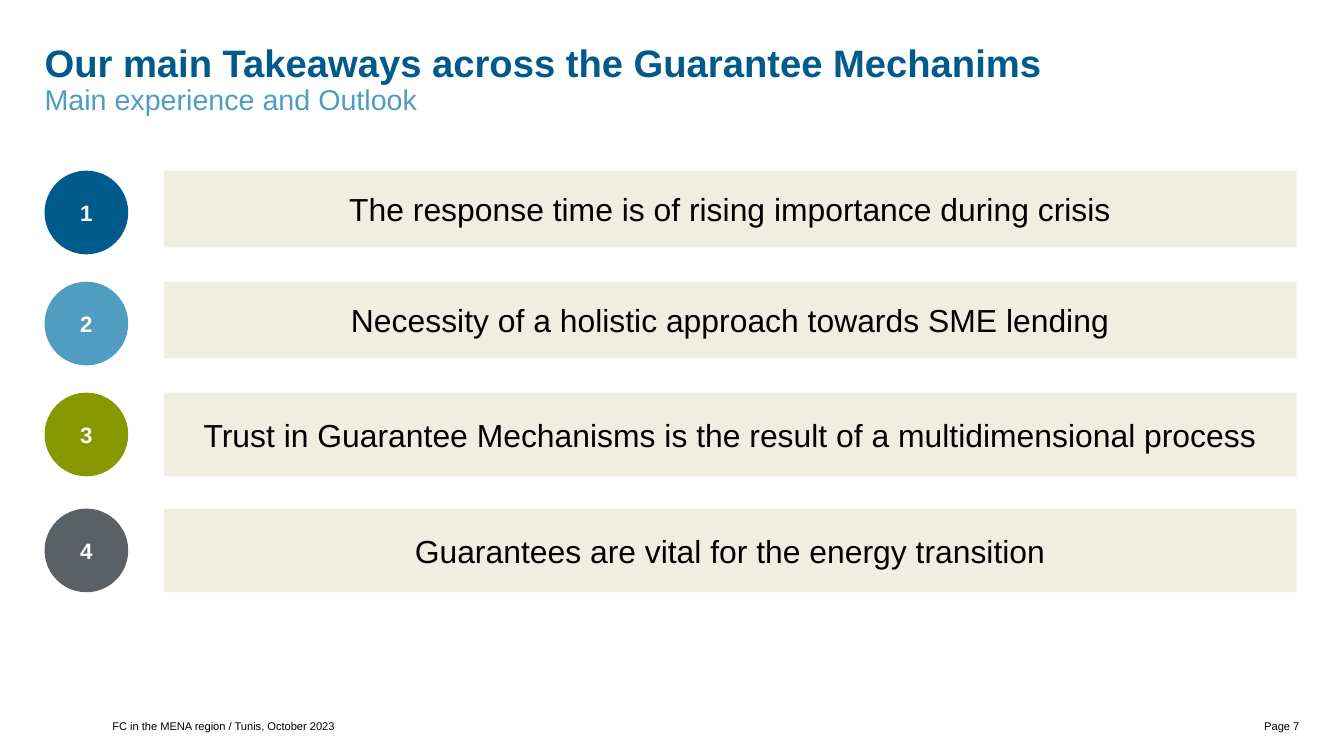
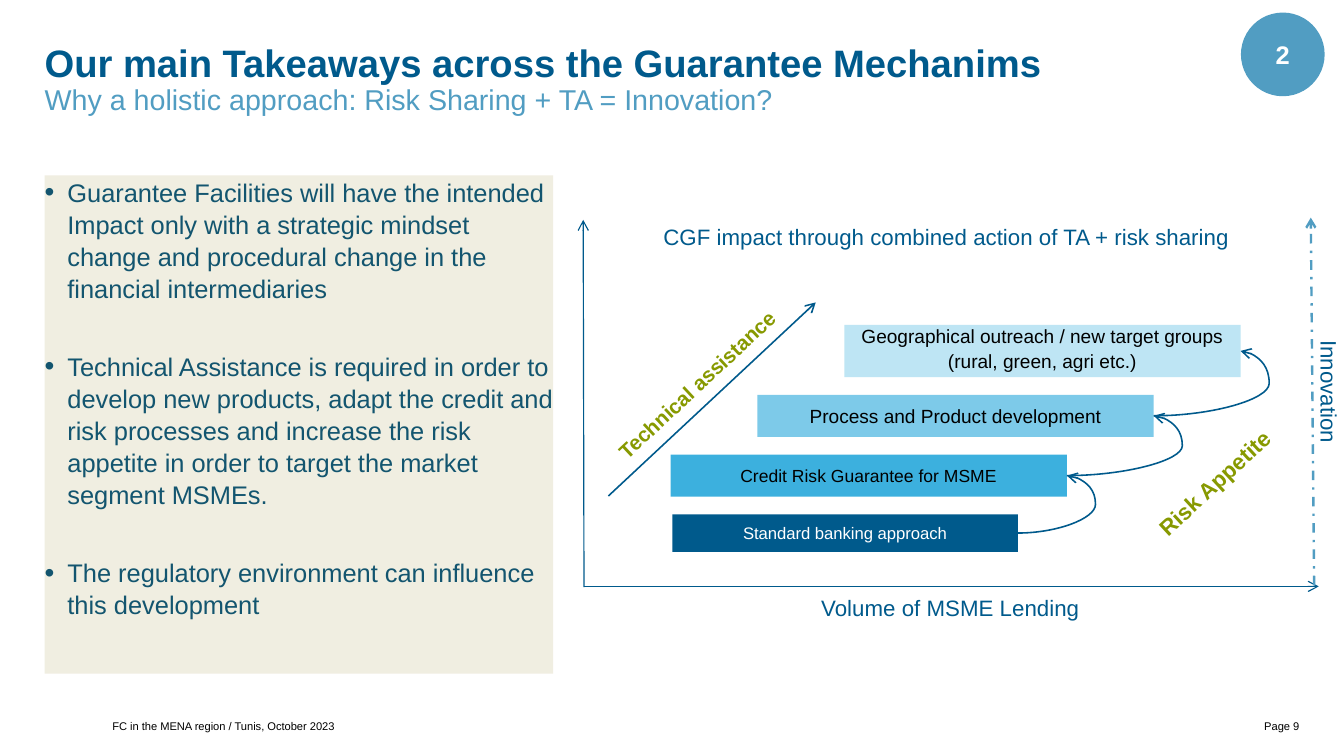
"""Builds two slides on takeaways from credit guarantee mechanisms."""
import pptx
import pptx.dml.color
import pptx.enum.dml
import pptx.enum.shapes
import pptx.enum.text
import pptx.oxml.ns
import pptx.util
from lxml import etree

Pt = pptx.util.Pt
RGB = pptx.dml.color.RGBColor.from_string
qn = pptx.oxml.ns.qn
ALIGN = pptx.enum.text.PP_ALIGN
ANCHOR = pptx.enum.text.MSO_ANCHOR
SHAPE = pptx.enum.shapes.MSO_SHAPE
CONNECTOR = pptx.enum.shapes.MSO_CONNECTOR
DASH = pptx.enum.dml.MSO_LINE.DASH_DOT

FONT = "Arial"
COLOURS = {
    "navy": "005A8C", "blue": "519DC2", "green": "879900", "grey": "5A6166",
    "sand": "F0EEE1", "teal": "13556F", "sky": "3CB0DE", "light": "7DCAE9",
    "pale": "BEE5F4", "black": "000000", "white": "FFFFFF",
}
MARGIN = 28
CIRCLE = 52.6


def add_label(page, text, area, size, colour, bold=False, align=ALIGN.LEFT,
              anchor=ANCHOR.TOP, kind=None, fill=None, inset=(0, 0)):
    """Add a text box, or a filled shape, with one paragraph per line of text."""
    place = [Pt(length) for length in area]
    if kind is None:
        box = page.shapes.add_textbox(*place)
    else:
        box = page.shapes.add_shape(kind, *place)
        box.shadow.inherit = False
        box.fill.solid()
        box.fill.fore_color.rgb = RGB(COLOURS[fill])
        box.line.fill.background()
    frame = box.text_frame
    frame.word_wrap = True
    frame.vertical_anchor = anchor
    frame.margin_left = frame.margin_right = Pt(inset[0])
    frame.margin_top = frame.margin_bottom = Pt(inset[1])
    for index, line in enumerate(text.split("\n")):
        para = frame.paragraphs[0] if index == 0 else frame.add_paragraph()
        para.alignment = align
        span = para.add_run()
        span.text = line
        span.font.name = FONT
        span.font.size = Pt(size)
        span.font.bold = bold
        span.font.color.rgb = RGB(COLOURS[colour])
    return box


def add_circle(page, number, left, top, size, fill):
    """Add a numbered circle."""
    add_label(page, number, (left, top, CIRCLE, CIRCLE), size, "white", True,
              ALIGN.CENTER, ANCHOR.MIDDLE, SHAPE.OVAL, fill)


deck = pptx.Presentation()
deck.slide_width, deck.slide_height = Pt(844.56), Pt(475.2)

pages = []
for subtitle, number in [
    ("Main experience and Outlook", "Page 7"),
    ("Why a holistic approach: Risk Sharing + TA = Innovation?", "Page 9"),
]:
    page = deck.slides.add_slide(deck.slide_layouts[6])
    title = add_label(page, "Our main Takeaways across the Guarantee Mechanims",
                      (MARGIN, 26.6, 788, 29.5), 24, "navy", True)
    subtitle_box = add_label(page, subtitle, (MARGIN, 53.3, 788, 26), 18, "blue")
    for box in (title, subtitle_box):
        box.text_frame.paragraphs[0].line_spacing = 0.95
    add_label(page, "FC in the MENA region / Tunis, October 2023",
              (70.6, 444.2, 681, 16.6), 7, "black", anchor=ANCHOR.BOTTOM)
    add_label(page, number, (756, 444.2, 60.5, 16.6), 7, "black",
              align=ALIGN.RIGHT, anchor=ANCHOR.BOTTOM)
    pages.append(page)
overview, holistic = pages

takeaways = [
    ("The response time is of rising importance during crisis", 107.3, 48.2, "navy"),
    ("Necessity of a holistic approach towards SME lending", 177.1, 48.2, "blue"),
    ("Trust in Guarantee Mechanisms is the result of a multidimensional process",
     246.8, 52.6, "green"),
    ("Guarantees are vital for the energy transition", 319.7, 52.6, "grey"),
]
for number, (text, top, height, fill) in enumerate(takeaways, 1):
    add_label(overview, text, (103.2, top, 711.4, height), 20, "black", False,
              ALIGN.CENTER, ANCHOR.MIDDLE, SHAPE.RECTANGLE, "sand")
    add_circle(overview, str(number), MARGIN, top, 14, fill)

arguments = "\n".join([
    "Guarantee Facilities will have the intended Impact only with a strategic mindset "
    "change and procedural change in the financial intermediaries",
    "Technical Assistance is required in order to develop new products, adapt the credit "
    "and risk processes and increase the risk appetite in order to target the market "
    "segment MSMEs.",
    "The regulatory environment can influence this development",
])
panel = add_label(holistic, arguments, (MARGIN, 110.2, 319.7, 313.2), 16, "teal",
                  kind=SHAPE.RECTANGLE, fill="sand")
for index, para in enumerate(panel.text_frame.paragraphs):
    properties = para._p.get_or_add_pPr()
    properties.set("marL", str(Pt(14.4)))
    properties.set("indent", str(-Pt(14.4)))
    etree.SubElement(properties, qn("a:buSzPct"), val="110000")
    etree.SubElement(properties, qn("a:buFont"), typeface=FONT)
    etree.SubElement(properties, qn("a:buChar"), char="•")
    para.line_spacing = 1.05
    if index:
        para.space_before = Pt(29)

steps = []
for text, area, size, colour, fill in [
    ("Standard banking approach", (422.6, 323.3, 217, 23.6), 10.5, "white", "navy"),
    ("Credit Risk Guarantee for MSME", (421.4, 285.8, 249, 26.4), 11, "black", "sky"),
    ("Process and Product development", (476, 248.2, 249, 26.4), 12, "black", "light"),
    ("Geographical outreach / new target groups\n(rural, green, agri etc.)",
     (530.6, 204.2, 249, 32.8), 12, "black", "pale"),
]:
    steps.append(add_label(holistic, text, area, size, colour, False, ALIGN.CENTER,
                           ANCHOR.MIDDLE, SHAPE.RECTANGLE, fill, (7.6, 4)))
outreach = steps[-1].text_frame
outreach.vertical_anchor = ANCHOR.TOP
for para in outreach.paragraphs:
    para.line_spacing = Pt(10)
outreach.paragraphs[1].space_before = Pt(6)

for text, area, size, colour, bold, rotation, align in [
    ("CGF impact through combined action of TA + risk sharing",
     (367.2, 136.1, 455, 25.9), 14, "navy", False, 0, ALIGN.CENTER),
    ("Volume of MSME Lending",
     (465.1, 369.4, 264.2, 25.2), 14, "navy", False, 0, ALIGN.CENTER),
    ("Innovation", (789.1, 240.5, 92.9, 24.5), 14, "navy", False, 90, ALIGN.LEFT),
    ("Risk Appetite", (694.8, 290.9, 136.8, 25.2), 14, "green", True, 317.3, ALIGN.CENTER),
    ("Technical assistance",
     (357.1, 229.7, 161.3, 23.8), 13, "green", True, 316.9, ALIGN.CENTER),
]:
    label = add_label(holistic, text, area, size, colour, bold, align, inset=(7.6, 4))
    label.rotation = rotation

arrows = []
for ends, colour, width, dash in [
    ((367, 369, 366.5, 138.2), "navy", 0.75, None),
    ((367, 368.6, 828.7, 368.6), "navy", 0.75, None),
    ((382.3, 311.8, 512.6, 190.1), "navy", 1, None),
    ((825.8, 367.9, 823.7, 136.8), "blue", 1.5, DASH),
]:
    arrow = holistic.shapes.add_connector(CONNECTOR.STRAIGHT, *[Pt(end) for end in ends])
    arrows.append((arrow, colour, width, dash))

for lower, upper in zip(steps, steps[1:]):
    curve = holistic.shapes.add_connector(CONNECTOR.CURVE, 0, 0, 0, 0)
    curve.begin_connect(lower, 3)
    curve.end_connect(upper, 3)
    bulge = round(100000 * (1 + Pt(18) / curve.width))
    guides = curve.element.spPr.find(qn("a:prstGeom")).get_or_add_avLst()
    etree.SubElement(guides, qn("a:gd"), name="adj1", fmla=f"val {bulge}")
    arrows.append((curve, "navy", 1, None))

for arrow, colour, width, dash in arrows:
    arrow.line.color.rgb = RGB(COLOURS[colour])
    arrow.line.width = Pt(width)
    if dash:
        arrow.line.dash_style = dash
    properties = arrow.element.spPr
    etree.SubElement(properties.find(qn("a:ln")), qn("a:tailEnd"), type="arrow")
    etree.SubElement(properties, qn("a:effectLst"))

add_circle(holistic, "2", 779.8, 7.9, 16, "blue")

deck.save("out.pptx")
